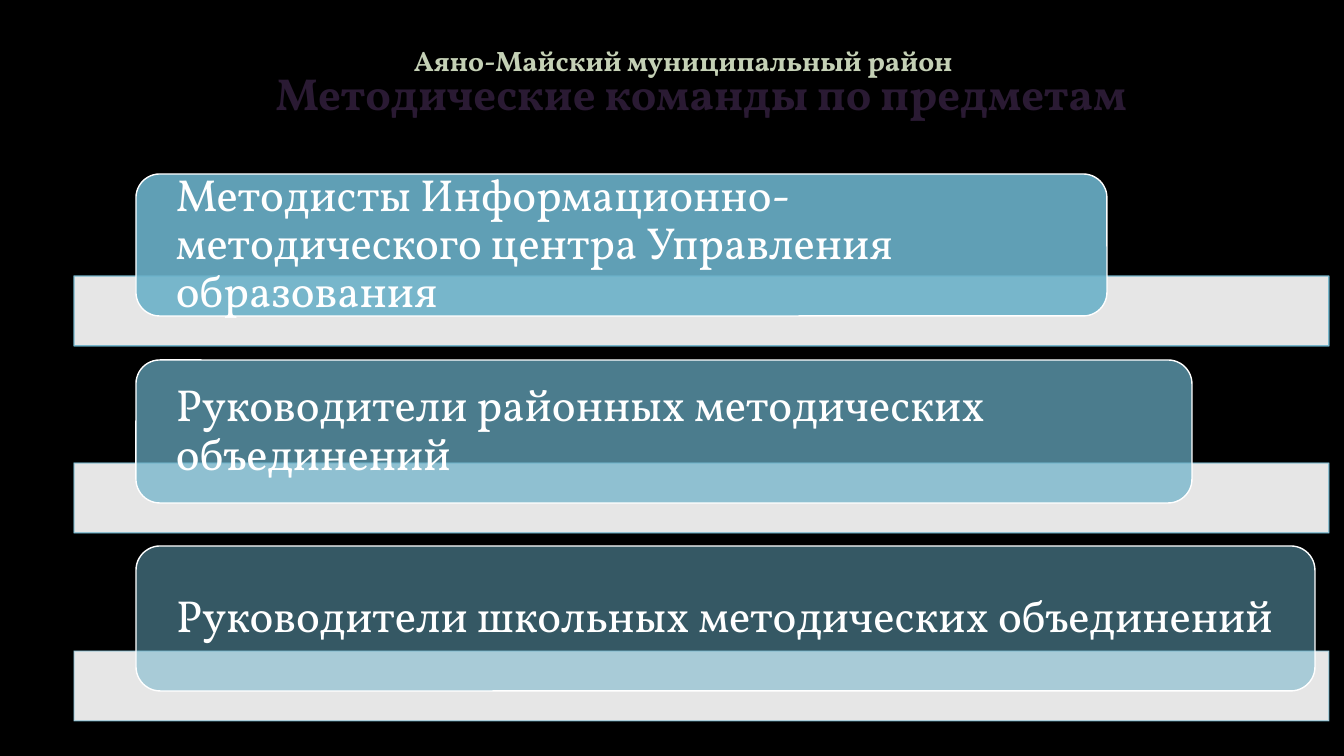
from lxml import etree
from pptx import Presentation
from pptx.dml.color import RGBColor
from pptx.enum.shapes import MSO_SHAPE as Shape
from pptx.enum.text import MSO_ANCHOR as Anchor, MSO_AUTO_SIZE as AutoSize, PP_ALIGN as Align
from pptx.oxml.ns import qn
from pptx.util import Emu, Pt

FONT = "Vollkorn"
BLACK = RGBColor(0x00, 0x00, 0x00)
WHITE = RGBColor(0xFF, 0xFF, 0xFF)
BLUE = RGBColor(0x6B, 0xB1, 0xC9)
PLUM = RGBColor(0x2A, 0x1A, 0x33)
SAGE = RGBColor(0xC4, 0xD0, 0xB5)

PX = 914400 / 100.8
CARD_TOP, CARD_PITCH, CARD_LEFT = 174, 186, 136
BAR_LEFT, BAR_WIDTH, BAR_HEIGHT, OVERLAP = 74, 1255, 70, 40

# text, width, height, opacity
TEAMS = [
    ("Методисты Информационно-методического центра Управления образования", 971, 142, 90),
    ("Руководители районных методических объединений", 1056, 143, 70),
    ("Руководители школьных методических объединений", 1179, 145, 50),
]


def write(shape, text, size, color, bold, align):
    paragraph = shape.text_frame.paragraphs[0]
    paragraph.text = text
    paragraph.alignment = align
    font = paragraph.font
    font.name, font.size, font.bold = FONT, Pt(size), bold
    font.color.rgb = color
    return paragraph


def add_panel(kind, box, fill, fill_opacity, line, line_opacity):
    """Add a shape with a translucent fill and outline; box is in px."""
    panel = page.shapes.add_shape(kind, *[Emu(round(n * PX)) for n in box])
    panel.shadow.inherit = False
    panel.fill.solid()
    panel.fill.fore_color.rgb = fill
    panel.line.color.rgb = line
    panel.line.width = Pt(1)
    colors = panel._element.spPr.iter(qn("a:srgbClr"))
    for color, opacity in zip(list(colors), (fill_opacity, line_opacity)):
        etree.SubElement(color, qn("a:alpha"), val=str(opacity * 1000))
    return panel


deck = Presentation()
deck.slide_width, deck.slide_height = Emu(round(1344 * PX)), Emu(round(756 * PX))
page = deck.slides.add_slide(deck.slide_layouts[5])
page.background.fill.solid()
page.background.fill.fore_color.rgb = BLACK

title = page.shapes.title
title.left, title.top, title.width, title.height = [Emu(round(n * PX)) for n in (213, 61, 977, 65)]
title.text_frame.vertical_anchor = Anchor.TOP
title.text_frame.auto_size = AutoSize.SHAPE_TO_FIT_TEXT
write(title, "Методические команды по предметам", 32, PLUM, True, Align.CENTER)

district = page.shapes.add_textbox(*[Emu(round(n * PX)) for n in (404, 39, 641, 44)])
district.text_frame.word_wrap = True
district.text_frame.auto_size = AutoSize.SHAPE_TO_FIT_TEXT
write(district, "Аяно-Майский муниципальный район", 20, SAGE, True, Align.LEFT)

for row, (text, width, height, opacity) in enumerate(TEAMS):
    top = CARD_TOP + row * CARD_PITCH
    bar_top = top + height - OVERLAP
    add_panel(Shape.RECTANGLE, (BAR_LEFT, bar_top, BAR_WIDTH, BAR_HEIGHT),
              WHITE, 90, BLUE, opacity)
    card = add_panel(Shape.ROUNDED_RECTANGLE, (CARD_LEFT, top, width, height),
                     BLUE, opacity, WHITE, 100)
    frame = card.text_frame
    frame.word_wrap = True
    frame.vertical_anchor = Anchor.MIDDLE
    frame.margin_left = frame.margin_right = Emu(round(33 * PX))
    frame.margin_top = frame.margin_bottom = 0
    write(card, text, 32, WHITE, False, Align.LEFT).line_spacing = 0.9

deck.save("out.pptx")
